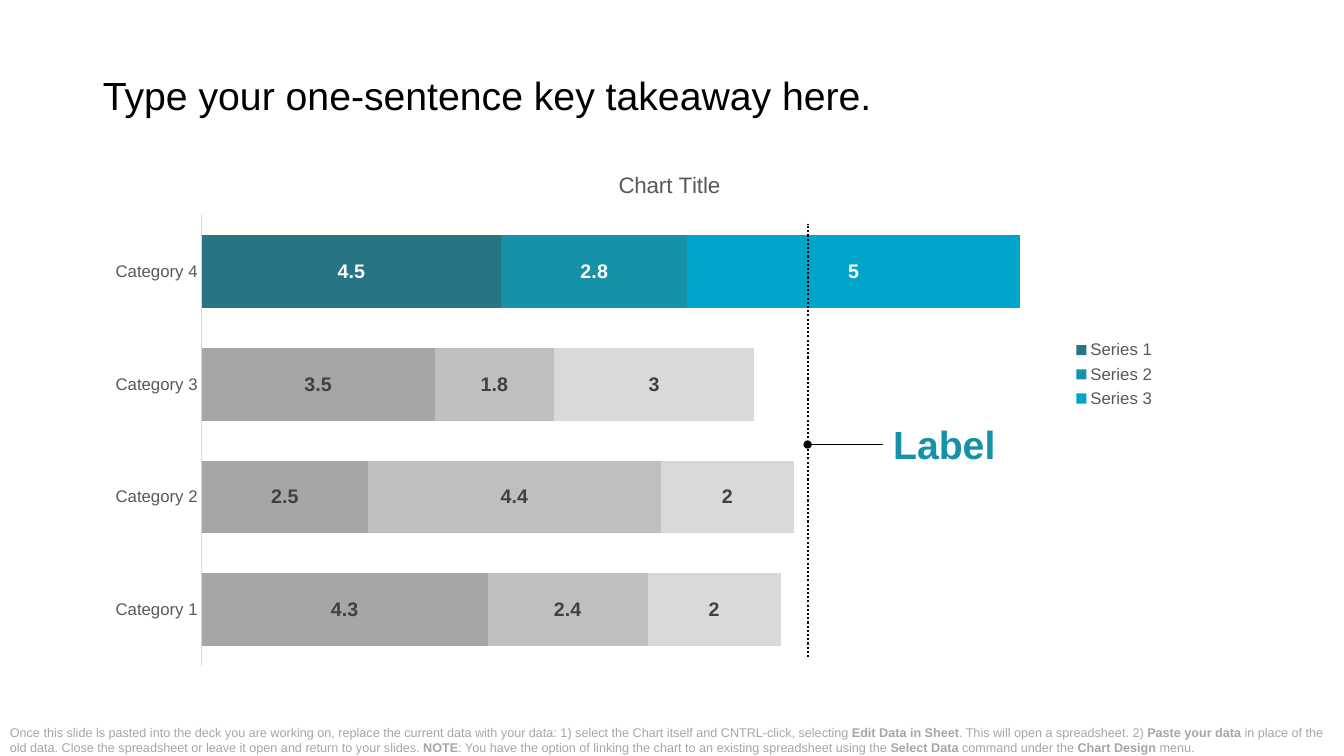
from lxml import etree
from pptx import Presentation
from pptx.chart.data import CategoryChartData
from pptx.dml.color import RGBColor
from pptx.enum.chart import (XL_CHART_TYPE, XL_LABEL_POSITION, XL_LEGEND_POSITION,
                             XL_TICK_MARK)
from pptx.enum.dml import MSO_LINE
from pptx.enum.shapes import MSO_CONNECTOR
from pptx.enum.text import MSO_ANCHOR, MSO_AUTO_SIZE, PP_ALIGN
from pptx.oxml.ns import qn
from pptx.util import Inches, Pt

BAR_STACKED = XL_CHART_TYPE.BAR_STACKED
LABEL_CENTER = XL_LABEL_POSITION.CENTER
LEGEND_RIGHT = XL_LEGEND_POSITION.RIGHT
TICK_NONE = XL_TICK_MARK.NONE
DOTTED = MSO_LINE.ROUND_DOT
STRAIGHT = MSO_CONNECTOR.STRAIGHT
MIDDLE = MSO_ANCHOR.MIDDLE
FIT_SHAPE = MSO_AUTO_SIZE.SHAPE_TO_FIT_TEXT
FIT_NONE = MSO_AUTO_SIZE.NONE
LEFT = PP_ALIGN.LEFT
TITLE_ONLY = 5

BLACK, WHITE = "000000", "FFFFFF"
TEAL, DARK_TEXT, LABEL_GRAY = "1591A8", "595959", "404040"
NOTE_GRAY, AXIS_GRAY = "A6A6A6", "D9D9D9"

CATEGORIES = ["Category 1", "Category 2", "Category 3", "Category 4"]
HIGHLIGHT = 3
# name, values, highlight colour, muted colour
SERIES = [
    ("Series 1", (4.3, 2.5, 3.5, 4.5), "277484", "A6A6A6"),
    ("Series 2", (2.4, 4.4, 1.8, 2.8), TEAL, "BFBFBF"),
    ("Series 3", (2, 2, 3, 5), "00A6CA", "D9D9D9"),
]
# text, bold
NOTE = [
    ("Once this slide is pasted into the deck you are working on, replace the current "
     "data with your data: 1) select the Chart itself and CNTRL-click, selecting ", False),
    ("Edit Data in Sheet", True),
    (". This will open a spreadsheet. 2) ", False),
    ("Paste your data ", True),
    ("in place of the old data. Close the spreadsheet or leave it open and return to "
     "your slides. ", False),
    ("NOTE", True),
    (": You have the option of linking the chart to an existing spreadsheet using the ", False),
    ("Select Data ", True),
    ("command under the ", False),
    ("Chart Design ", True),
    ("menu.", False),
]


def color(hex_value):
    return RGBColor.from_string(hex_value)


def apply(target, values):
    for name, value in values.items():
        setattr(target, name, value)


def place(element, index, **fractions):
    """Give a chart part a manual layout in fractions of the chart area."""
    for old_layout in element.findall(qn("c:layout")):
        element.remove(old_layout)
    layout = etree.Element(qn("c:layout"))
    manual = etree.SubElement(layout, qn("c:manualLayout"))
    if element.tag == qn("c:plotArea"):
        etree.SubElement(manual, qn("c:layoutTarget")).set("val", "inner")
    for mode in ("xMode", "yMode"):
        etree.SubElement(manual, qn("c:" + mode)).set("val", "edge")
    for name, value in fractions.items():
        etree.SubElement(manual, qn("c:" + name)).set("val", str(value))
    element.insert(index, layout)


class SlideBuilder:
    font_name = "Arial"

    def __init__(self, slide):
        self.slide = slide

    def style(self, font, size, hex_value, bold=False):
        apply(font, {"name": self.font_name, "size": Pt(size), "bold": bold})
        font.color.rgb = color(hex_value)

    def title(self, text, box):
        shape = self.slide.shapes.title
        apply(shape, dict(zip(("left", "top", "width", "height"), map(Inches, box))))
        frame = shape.text_frame
        apply(frame, {"text": text, "vertical_anchor": MIDDLE, "auto_size": FIT_NONE})
        paragraph = frame.paragraphs[0]
        apply(paragraph, {"alignment": LEFT, "line_spacing": 0.9})
        self.style(paragraph.runs[0].font, 28, BLACK)

    def text(self, parent, box, runs, size, hex_value, frame_format, space_after=0):
        frame = parent.add_textbox(*map(Inches, box)).text_frame
        apply(frame, {"word_wrap": True, **frame_format})
        paragraph = frame.paragraphs[0]
        paragraph.space_after = Pt(space_after)
        for text, bold in runs:
            run = paragraph.add_run()
            run.text = text
            self.style(run.font, size, hex_value, bold)

    def line(self, parent, start, end, width, dash=None, tail=None):
        connector = parent.add_connector(STRAIGHT, *map(Inches, start + end))
        apply(connector.line, {"width": Pt(width), "dash_style": dash})
        connector.line.color.rgb = color(BLACK)
        if tail:
            outline = connector.line._get_or_add_ln()
            etree.SubElement(outline, qn("a:tailEnd")).set("type", tail)
        etree.SubElement(connector._element.spPr, qn("a:effectLst"))

    def chart(self, box):
        data = CategoryChartData()
        data.categories = CATEGORIES
        for name, values, _, _ in SERIES:
            data.add_series(name, values)
        chart = self.slide.shapes.add_chart(BAR_STACKED, *map(Inches, box), data).chart
        self.style(chart.font, 10, BLACK)

        chart.has_title = True
        title_frame = chart.chart_title.text_frame
        title_frame.text = "Chart Title"
        self.style(title_frame.paragraphs[0].runs[0].font, 16, DARK_TEXT)
        place(chart.chart_title._element, 1, x=0.45, y=0.03)

        chart.has_legend = True
        apply(chart.legend, {"position": LEGEND_RIGHT, "include_in_layout": False})
        self.style(chart.legend.font, 12, DARK_TEXT)
        place(chart.legend._element, 1, x=0.836, y=0.35, w=0.09, h=0.15)

        self.axes(chart)
        plot = chart.plots[0]
        apply(plot, {"gap_width": 55, "overlap": 100, "vary_by_categories": False})
        for series, (_, _, bright, muted) in zip(plot.series, SERIES):
            self.series(series, bright, muted)
        place(chart._chartSpace.chart.plotArea, 0, x=0.094, y=0.122, w=0.746, h=0.859)

    def axes(self, chart):
        axis = chart.category_axis
        apply(axis, {"major_tick_mark": TICK_NONE, "minor_tick_mark": TICK_NONE})
        self.style(axis.tick_labels.font, 12, DARK_TEXT)
        axis.format.line.width = Pt(0.75)
        axis.format.line.color.rgb = color(AXIS_GRAY)
        apply(chart.value_axis, {"visible": False, "has_major_gridlines": False,
                                 "minimum_scale": 0, "maximum_scale": 13})

    def series(self, series, bright, muted):
        fills = [series.format.fill]
        fills += [series.points[index].format.fill for index in range(len(CATEGORIES))]
        for fill, hex_value in zip(fills, [bright] + [muted] * HIGHLIGHT + [bright]):
            fill.solid()
            fill.fore_color.rgb = color(hex_value)
        labels = series.data_labels
        apply(labels, {"show_value": True, "position": LABEL_CENTER})
        self.style(labels.font, 14, LABEL_GRAY, True)
        highlight_label = series.points[HIGHLIGHT].data_label
        self.style(highlight_label.font, 14, WHITE, True)
        highlight_label.position = LABEL_CENTER


def main():
    presentation = Presentation()
    apply(presentation, {"slide_width": Inches(13.33), "slide_height": Inches(7.5)})
    slide = presentation.slides.add_slide(presentation.slide_layouts[TITLE_ONLY])
    builder = SlideBuilder(slide)
    builder.title("Type your one-sentence key takeaway here.", (0.92, 0.4, 11.5, 1.15))
    builder.text(slide.shapes, (0, 7.18, 13.33, 0.32), NOTE, 9, NOTE_GRAY,
                 {"vertical_anchor": MIDDLE}, space_after=12)
    builder.chart((0.92, 1.5, 11.5, 5.21))

    marker = slide.shapes.add_group_shape().shapes
    builder.line(marker, (8.01, 6.52), (8.01, 2.22), 1.5, dash=DOTTED)
    builder.line(marker, (8.76, 4.41), (8.01, 4.41), 1, tail="oval")
    builder.text(marker, (8.76, 4.12, 3.52, 0.57), [("Label", True)], 28, TEAL,
                 {"auto_size": FIT_SHAPE})
    presentation.save("out.pptx")


if __name__ == "__main__":
    main()
